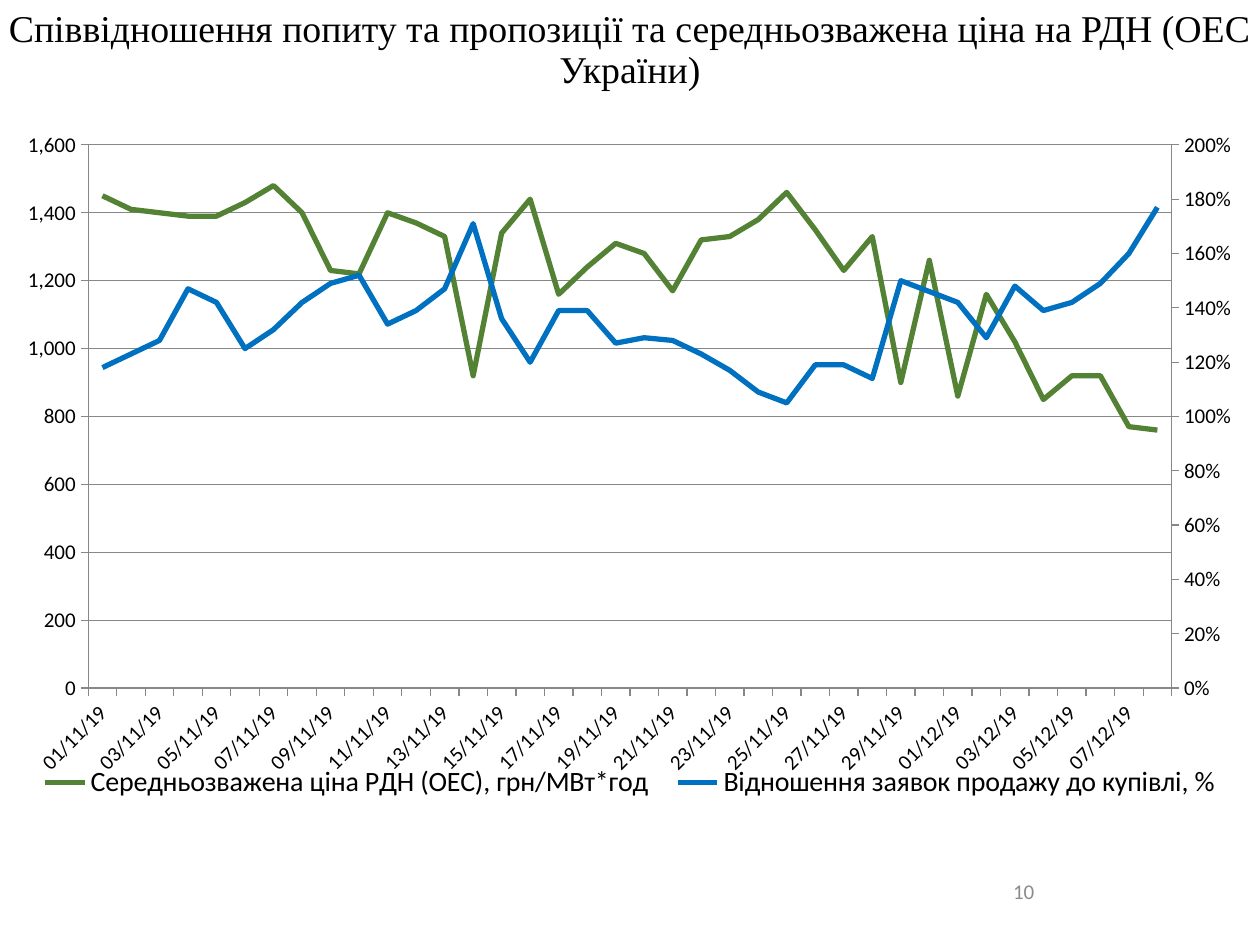
import copy

import pptx
import pptx.chart.axis
import pptx.chart.data
import pptx.dml.color
import pptx.enum.chart
import pptx.enum.text
import pptx.oxml
import pptx.oxml.ns
import pptx.util

Inches, Pt = pptx.util.Inches, pptx.util.Pt
RGB = pptx.dml.color.RGBColor.from_string
qn = pptx.oxml.ns.qn

THEME = {
    "text": "000000", "muted": "8C8C8C", "axis": "878787",
    "price": "548235", "ratio": "0070C0",
    "title_font": "Times New Roman", "font": "Calibri",
    "title_pt": 21.6, "legend_pt": 16, "small_pt": 12, "line_pt": 3,
}

TITLE = "Співвідношення попиту та пропозиції та середньозважена ціна на РДН (ОЕС України)"
PAGE = "10"
DAYS_BY_MONTH = [(11, 30), (12, 8)]
DATES = [f"{day:02}/{month}/19" for month, days in DAYS_BY_MONTH for day in range(1, days + 1)]
SERIES = [
    ("Середньозважена ціна РДН (ОЕС), грн/МВт*год", "#,##0", "price",
     [1450, 1410, 1400, 1390, 1390, 1430, 1480, 1400, 1230, 1220, 1400, 1370, 1330,
      920, 1340, 1440, 1160, 1240, 1310, 1280, 1170, 1320, 1330, 1380, 1460, 1350,
      1230, 1330, 900, 1260, 860, 1160, 1020, 850, 920, 920, 770, 760]),
    ("Відношення заявок продажу до купівлі, %", "0%", "ratio",
     [1.18, 1.23, 1.28, 1.47, 1.42, 1.25, 1.32, 1.42, 1.49, 1.52, 1.34, 1.39, 1.47,
      1.71, 1.36, 1.2, 1.39, 1.39, 1.27, 1.29, 1.28, 1.23, 1.17, 1.09, 1.05, 1.19,
      1.19, 1.14, 1.5, 1.46, 1.42, 1.29, 1.48, 1.39, 1.42, 1.49, 1.6, 1.77]),
]
PLOT_LAYOUT = (0.07, 0.04, 0.86, 0.75)
LEGEND_LAYOUT = (0.02, 0.89, 0.96, 0.06)


def add_text(slide, box, text, font, size, color, line_spacing=1.0):
    tf = slide.shapes.add_textbox(*map(Inches, box)).text_frame
    tf.word_wrap = True
    tf.vertical_anchor = pptx.enum.text.MSO_ANCHOR.MIDDLE
    tf.margin_left = tf.margin_right = tf.margin_top = tf.margin_bottom = 0
    p = tf.paragraphs[0]
    p.text = text
    p.alignment = pptx.enum.text.PP_ALIGN.CENTER
    p.line_spacing = line_spacing
    p.font.name, p.font.size = font, Pt(size)
    p.font.color.rgb = RGB(color)


def layout_xml(box, inner=False):
    """Manual layout in fractions of the chart frame."""
    target = '<c:layoutTarget val="inner"/>' if inner else ""
    modes = "".join(f'<c:{k}Mode val="edge"/>' for k in "xy")
    sizes = "".join(f'<c:{k} val="{v}"/>' for k, v in zip("xywh", box))
    return pptx.oxml.parse_xml(
        f'<c:layout {pptx.oxml.ns.nsdecls("c")}><c:manualLayout>'
        f"{target}{modes}{sizes}</c:manualLayout></c:layout>")


def set_layout(parent, layout, after=None):
    for old in parent.findall(qn("c:layout")):
        parent.remove(old)
    if after is None:
        parent.insert(0, layout)
    else:
        parent.find(qn(after)).addnext(layout)


def style_axis(axis):
    axis.major_tick_mark = pptx.enum.chart.XL_TICK_MARK.OUTSIDE
    axis.minor_tick_mark = pptx.enum.chart.XL_TICK_MARK.NONE
    axis.tick_labels.font.size = Pt(THEME["small_pt"])
    axis.format.line.color.rgb = RGB(THEME["axis"])


def scale_axis(axis, top, step, number_format):
    axis.minimum_scale, axis.maximum_scale, axis.major_unit = 0, top, step
    axis.tick_labels.number_format = number_format
    axis.tick_labels.number_format_is_linked = False


def move_last_series_to_right_axis(plot_area):
    """Put the last series in a second line plot and return its value axis."""
    left = plot_area.find(qn("c:lineChart"))
    cat, val = plot_area.find(qn("c:catAx")), plot_area.find(qn("c:valAx"))
    right = copy.deepcopy(left)
    left.remove(left.findall(qn("c:ser"))[-1])
    for ser in right.findall(qn("c:ser"))[:-1]:
        right.remove(ser)
    left.addnext(right)

    right_cat, right_val = copy.deepcopy(cat), copy.deepcopy(val)
    cat_id, val_id = "50010", "50020"
    for element, axis_id in zip(right.findall(qn("c:axId")), (cat_id, val_id)):
        element.set("val", axis_id)
    for axis, own, other in ((right_cat, cat_id, val_id), (right_val, val_id, cat_id)):
        axis.find(qn("c:axId")).set("val", own)
        axis.find(qn("c:crossAx")).set("val", other)
    right_cat.find(qn("c:delete")).set("val", "1")
    right_val.find(qn("c:axPos")).set("val", "r")
    right_val.find(qn("c:crosses")).set("val", "max")
    right_val.remove(right_val.find(qn("c:majorGridlines")))
    val.addnext(right_val)
    right_val.addnext(right_cat)
    return pptx.chart.axis.ValueAxis(right_val)


def add_price_chart(slide):
    data = pptx.chart.data.CategoryChartData()
    data.categories = DATES
    for name, number_format, _, values in SERIES:
        data.add_series(name, values, number_format)
    chart = slide.shapes.add_chart(
        pptx.enum.chart.XL_CHART_TYPE.LINE,
        *map(Inches, (0, 0.92, 10, 5.75)), data).chart
    chart.has_title = False
    chart.font.name, chart.font.size = THEME["font"], Pt(18)
    chart.font.color.rgb = RGB(THEME["text"])
    chart.plots[0].vary_by_categories = False

    for ser, (_, _, color, _) in zip(chart.plots[0].series, SERIES):
        ser.smooth = False
        ser.marker.style = pptx.enum.chart.XL_MARKER_STYLE.NONE
        ser.format.line.color.rgb = RGB(THEME[color])
        ser.format.line.width = Pt(THEME["line_pt"])

    cat, val = chart.category_axis, chart.value_axis
    style_axis(cat)
    style_axis(val)
    val.has_major_gridlines = True
    val.major_gridlines.format.line.color.rgb = RGB(THEME["axis"])
    cat._element.find(qn("c:txPr")).find(qn("a:bodyPr")).set("rot", str(-45 * 60000))
    skip = pptx.oxml.parse_xml(f'<c:tickLblSkip {pptx.oxml.ns.nsdecls("c")} val="2"/>')
    cat._element.find(qn("c:noMultiLvlLbl")).addprevious(skip)

    chart.has_legend = True
    chart.legend.position = pptx.enum.chart.XL_LEGEND_POSITION.BOTTOM
    chart.legend.include_in_layout = False
    chart.legend.font.size = Pt(THEME["legend_pt"])
    set_layout(chart.legend._element, layout_xml(LEGEND_LAYOUT), "c:legendPos")

    plot_area = chart._chartSpace.find(qn("c:chart")).find(qn("c:plotArea"))
    set_layout(plot_area, layout_xml(PLOT_LAYOUT, inner=True))
    right = move_last_series_to_right_axis(plot_area)
    scale_axis(val, 1600, 200, "#,##0")
    scale_axis(right, 2, 0.2, "0%")


def main():
    prs = pptx.Presentation()
    prs.slide_width, prs.slide_height = Inches(10), Inches(7.5)
    slide = prs.slides.add_slide(prs.slide_layouts[6])
    add_text(slide, (0, 0, 10, 0.81), TITLE, THEME["title_font"],
             THEME["title_pt"], THEME["text"], 0.9)
    add_price_chart(slide)
    add_text(slide, (7.91, 6.95, 0.43, 0.24), PAGE, THEME["font"],
             THEME["small_pt"], THEME["muted"])
    prs.save("out.pptx")


if __name__ == "__main__":
    main()
